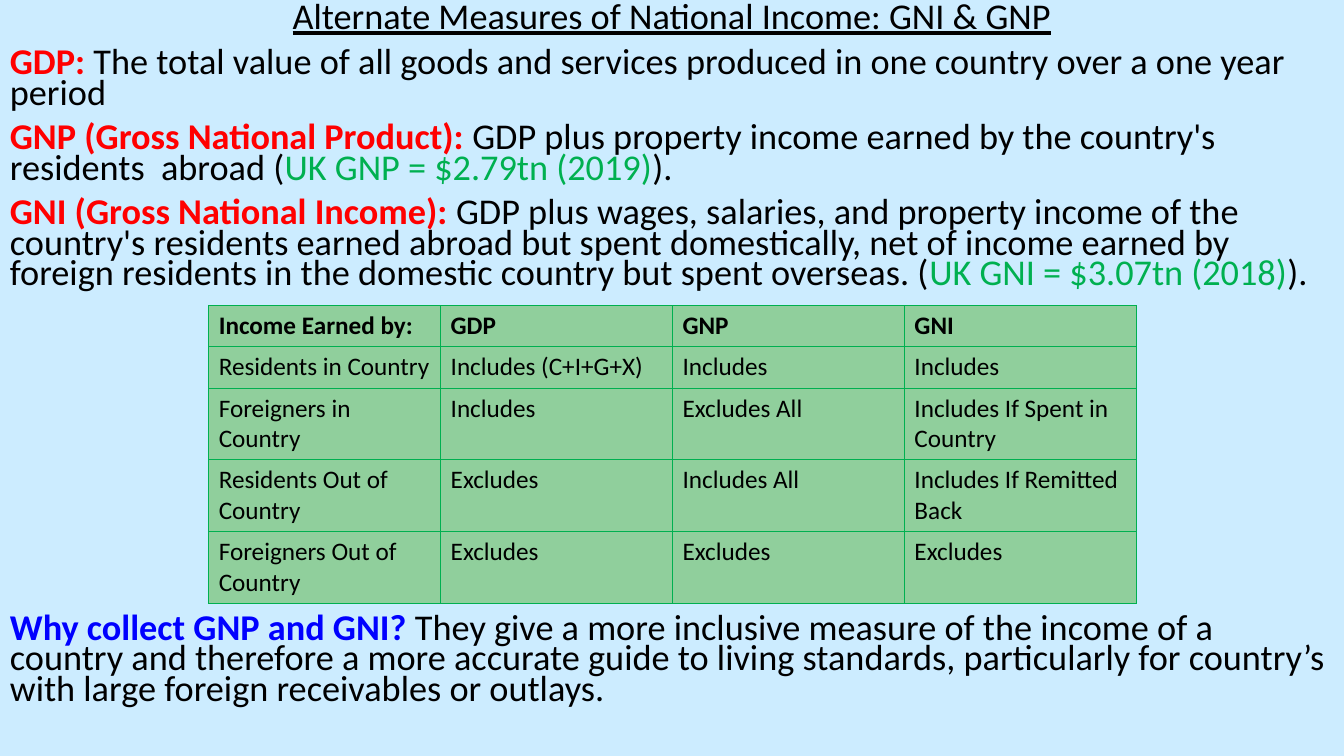
from lxml import etree
from pptx import Presentation
from pptx.dml.color import RGBColor
from pptx.enum.text import MSO_ANCHOR, MSO_AUTO_SIZE, PP_ALIGN
from pptx.oxml.ns import qn
from pptx.util import Inches, Pt

TOP, BOTTOM = MSO_ANCHOR.TOP, MSO_ANCHOR.BOTTOM
LEFT, CENTER = PP_ALIGN.LEFT, PP_ALIGN.CENTER
NO_FIT = MSO_AUTO_SIZE.NONE

SKY = RGBColor(0xCC, 0xEC, 0xFF)
BLACK = RGBColor(0x00, 0x00, 0x00)
RED = RGBColor(0xFF, 0x00, 0x00)
BLUE = RGBColor(0x00, 0x00, 0xFF)
GREEN = RGBColor(0x00, 0xB0, 0x50)
CELL_GREEN = RGBColor(0x90, 0xCF, 0x9C)

WIDTH, HEIGHT = 13.33, 7.5

TITLE = "Alternate Measures of National Income: GNI & GNP"

# Each paragraph is a list of (text, colour, bold)
DEFINITIONS = [
    [("GDP:", RED, True),
     (" The total value of all goods and services produced in one country "
      "over a one year period", BLACK, False)],
    [("GNP (Gross National Product): ", RED, True),
     ("GDP plus property income earned by the country's residents  abroad (", BLACK, False),
     ("UK GNP = $2.79tn (2019)", GREEN, False),
     (").", BLACK, False)],
    [("GNI (Gross National Income): ", RED, True),
     ("GDP plus wages, salaries, and property income of the country's residents "
      "earned abroad but spent domestically, net of income earned by foreign "
      "residents in the domestic country but spent overseas. (", BLACK, False),
     ("UK GNI = $3.07tn (2018)", GREEN, False),
     (").", BLACK, False)],
]

REASON = [
    [("Why collect GNP and GNI? ", BLUE, True),
     ("They give a more inclusive measure of the income of a country and therefore "
      "a more accurate guide to living standards, particularly for country’s with "
      "large foreign receivables or outlays.", BLACK, False)],
]

MEASURES = [
    ["Income Earned by:", "GDP", "GNP", "GNI"],
    ["Residents in Country", "Includes (C+I+G+X)", "Includes", "Includes"],
    ["Foreigners in Country", "Includes", "Excludes All", "Includes If Spent in Country"],
    ["Residents Out of Country", "Excludes", "Includes All", "Includes If Remitted Back"],
    ["Foreigners Out of Country", "Excludes", "Excludes", "Excludes"],
]
ROW_HEIGHTS = [0.41, 0.41, 0.71, 0.71, 0.71]


class SlideBuilder:
    font = "Calibri"
    body_size = 25.9
    table_size = 18

    def __init__(self, prs):
        self.s = prs.slides.add_slide(prs.slide_layouts[5])
        self.s.background.fill.solid()
        self.s.background.fill.fore_color.rgb = SKY

    def style_run(self, r, size, color=BLACK, bold=False):
        r.font.name = self.font
        r.font.size = Pt(size)
        r.font.color.rgb = color
        r.font.bold = bold

    def style_frame(self, tf):
        tf.word_wrap = True
        tf.auto_size = NO_FIT
        tf.vertical_anchor = TOP
        tf.margin_left = tf.margin_right = Inches(0.1)
        tf.margin_top = tf.margin_bottom = Inches(0.05)

    def style_paragraph(self, p, align=LEFT, before=0):
        p.alignment = align
        p.line_spacing = 0.7
        p.space_before = Pt(before)

    def title(self, text, top, height):
        sp = self.s.shapes.title
        sp.left, sp.top = Inches(0), Inches(top)
        sp.width, sp.height = Inches(WIDTH), Inches(height)
        tf = sp.text_frame
        tf.text = text
        self.style_frame(tf)
        p = tf.paragraphs[0]
        self.style_paragraph(p, CENTER)
        self.style_run(p.runs[0], self.body_size)
        p.runs[0].font.underline = True

    def text(self, paragraphs, top, height):
        sp = self.s.shapes.add_textbox(Inches(0), Inches(top), Inches(WIDTH), Inches(height))
        tf = sp.text_frame
        self.style_frame(tf)
        for i, parts in enumerate(paragraphs):
            p = tf.add_paragraph() if i else tf.paragraphs[0]
            self.style_paragraph(p, before=10 if i else 0)
            for words, color, bold in parts:
                r = p.add_run()
                r.text = words
                self.style_run(r, self.body_size, color, bold)

    def cell_borders(self, cell, color, width):
        tc_pr = cell._tc.get_or_add_tcPr()
        for side in ("lnL", "lnR", "lnT", "lnB"):
            ln = etree.SubElement(tc_pr, qn("a:" + side), w=str(Pt(width)))
            fill = etree.SubElement(ln, qn("a:solidFill"))
            etree.SubElement(fill, qn("a:srgbClr"), val=str(color))

    def table(self, rows, left, top, col_width, row_heights):
        n_cols = len(rows[0])
        frame = self.s.shapes.add_table(
            len(rows), n_cols, Inches(left), Inches(top),
            Inches(col_width * n_cols), Inches(sum(row_heights)))
        table = frame.table
        table.first_row = table.horz_banding = False
        for col in table.columns:
            col.width = Inches(col_width)
        for i, texts in enumerate(rows):
            table.rows[i].height = Inches(row_heights[i])
            for j, words in enumerate(texts):
                cell = table.cell(i, j)
                cell.text = words
                cell.vertical_anchor = TOP if i else BOTTOM
                self.style_run(cell.text_frame.paragraphs[0].runs[0],
                               self.table_size, bold=i == 0)
                self.cell_borders(cell, GREEN, 0.5)
                cell.fill.solid()
                cell.fill.fore_color.rgb = CELL_GREEN


def main():
    prs = Presentation()
    prs.slide_width, prs.slide_height = Inches(WIDTH), Inches(HEIGHT)
    slide = SlideBuilder(prs)

    # Title and definitions
    slide.title(TITLE, 0, 0.45)
    slide.text(DEFINITIONS, 0.45, 2.5)

    # Comparison of the three measures
    slide.table(MEASURES, 2.07, 3.03, 2.3, ROW_HEIGHTS)

    # Why the measures matter
    slide.text(REASON, 6.06, 1.2)

    prs.save("out.pptx")


if __name__ == "__main__":
    main()
